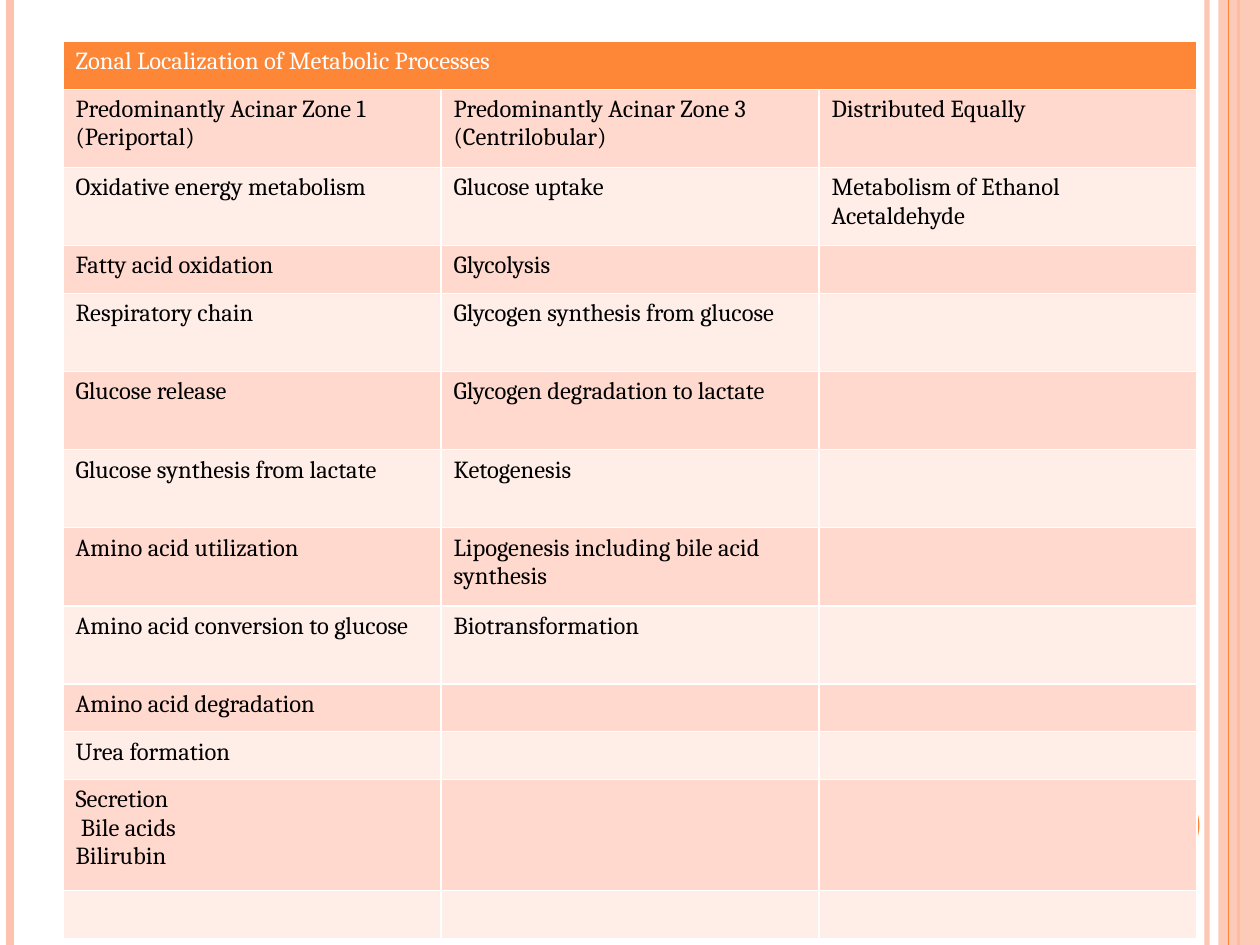
from typing import NamedTuple

from lxml.etree import SubElement
from pptx import Presentation
from pptx.dml.color import RGBColor
from pptx.enum.shapes import MSO_CONNECTOR, MSO_SHAPE
from pptx.oxml.ns import qn
from pptx.util import Inches, Pt

ORANGE = RGBColor(0xFE, 0x86, 0x37)
PEACH = RGBColor(0xFE, 0xC3, 0xAE)
DARK_BAND = RGBColor(0xFF, 0xD9, 0xCE)
LIGHT_BAND = RGBColor(0xFF, 0xED, 0xE8)
WHITE = RGBColor(0xFF, 0xFF, 0xFF)
BLACK = RGBColor(0x00, 0x00, 0x00)

SLIDE_WIDTH, SLIDE_HEIGHT = 10, 7.5
FONT_NAME, FONT_SIZE = "Cambria", 14
COLUMN_WIDTH = 3
SHORT, MEDIUM, TALL = 0.38, 0.62, 0.88


class Stripe(NamedTuple):
    x: float
    color: RGBColor
    weight: float
    opacity: int = 100


class TableRow(NamedTuple):
    height: float
    periportal: str = ""
    centrilobular: str = ""
    equal: str = ""


BACK_STRIPES = [
    Stripe(9.58, PEACH, 3, 93),
    Stripe(0.08, PEACH, 4.5),
    Stripe(9.83, ORANGE, 1.5),
]
FRONT_STRIPE = Stripe(9.75, ORANGE, 0.75)

ROWS = [
    TableRow(SHORT, "Zonal Localization of Metabolic Processes"),
    TableRow(MEDIUM, "Predominantly Acinar Zone 1 (Periportal)",
             "Predominantly Acinar Zone 3 (Centrilobular)", "Distributed Equally"),
    TableRow(MEDIUM, "Oxidative energy metabolism", "Glucose uptake",
             "Metabolism of Ethanol Acetaldehyde"),
    TableRow(SHORT, "Fatty acid oxidation", "Glycolysis"),
    TableRow(MEDIUM, "Respiratory chain", "Glycogen synthesis from glucose"),
    TableRow(MEDIUM, "Glucose release", "Glycogen degradation to lactate"),
    TableRow(MEDIUM, "Glucose synthesis from lactate", "Ketogenesis"),
    TableRow(MEDIUM, "Amino acid utilization",
             "Lipogenesis including bile acid synthesis"),
    TableRow(MEDIUM, "Amino acid conversion to glucose", "Biotransformation"),
    TableRow(SHORT, "Amino acid degradation"),
    TableRow(SHORT, "Urea formation"),
    TableRow(TALL, "Secretion\n Bile acids\nBilirubin"),
    TableRow(SHORT),
]


def set_opacity(fill, percent: int) -> None:
    color = fill._xPr.find(qn("a:solidFill"))[0]
    SubElement(color, qn("a:alpha"), val=str(percent * 1000))


def add_stripe(slide, stripe: Stripe) -> None:
    x = Inches(stripe.x)
    connector = slide.shapes.add_connector(
        MSO_CONNECTOR.STRAIGHT, x, 0, x, Inches(SLIDE_HEIGHT))
    connector.line.color.rgb = stripe.color
    connector.line.width = Pt(stripe.weight)
    if stripe.opacity < 100:
        set_opacity(connector.line.fill, stripe.opacity)
    SubElement(connector._element.spPr, qn("a:effectLst"))


def add_plain_shape(slide, kind: MSO_SHAPE, left: float, top: float,
                    width: float, height: float, color: RGBColor):
    shape = slide.shapes.add_shape(
        kind, Inches(left), Inches(top), Inches(width), Inches(height))
    shape.shadow.inherit = False
    shape.fill.solid()
    shape.fill.fore_color.rgb = color
    shape.line.fill.background()
    return shape


def fill_cell(cell, text: str, background: RGBColor, color: RGBColor) -> None:
    cell.fill.solid()
    cell.fill.fore_color.rgb = background
    cell.text = text
    for paragraph in cell.text_frame.paragraphs:
        paragraph.font.name = FONT_NAME
        paragraph.font.size = Pt(FONT_SIZE)
        paragraph.font.bold = False
        paragraph.font.color.rgb = color
        # Empty cells take their line height from the end mark
        SubElement(paragraph._p, qn("a:endParaRPr"), sz=str(FONT_SIZE * 100))


def add_process_table(slide, rows: list[TableRow]) -> None:
    height = sum(row.height for row in rows)
    table = slide.shapes.add_table(
        len(rows), 3, Inches(0.5), Inches(0.33),
        Inches(3 * COLUMN_WIDTH), Inches(height)).table
    for column in table.columns:
        column.width = Inches(COLUMN_WIDTH)
    for index, row in enumerate(rows):
        table.rows[index].height = Inches(row.height)
        if index == 0:
            background, color = ORANGE, WHITE
        else:
            background, color = (DARK_BAND if index % 2 else LIGHT_BAND), BLACK
        texts = (row.periportal, row.centrilobular, row.equal)
        for cell, text in zip(table.rows[index].cells, texts):
            fill_cell(cell, text, background, color)
    table.cell(0, 0).merge(table.cell(0, 2))


def main() -> None:
    presentation = Presentation()
    presentation.slide_width = Inches(SLIDE_WIDTH)
    presentation.slide_height = Inches(SLIDE_HEIGHT)
    slide = presentation.slides.add_slide(presentation.slide_layouts[6])

    # Side stripes, right band and page-number disc
    for stripe in BACK_STRIPES:
        add_stripe(slide, stripe)
    band = add_plain_shape(
        slide, MSO_SHAPE.RECTANGLE, 9.67, 0, 0.33, SLIDE_HEIGHT, PEACH)
    set_opacity(band.fill, 87)
    add_stripe(slide, FRONT_STRIPE)
    add_plain_shape(slide, MSO_SHAPE.OVAL, 8.92, 6.25, 0.6, 0.6, ORANGE)

    # Table of metabolic processes
    add_process_table(slide, ROWS)

    presentation.save("out.pptx")


if __name__ == "__main__":
    main()
